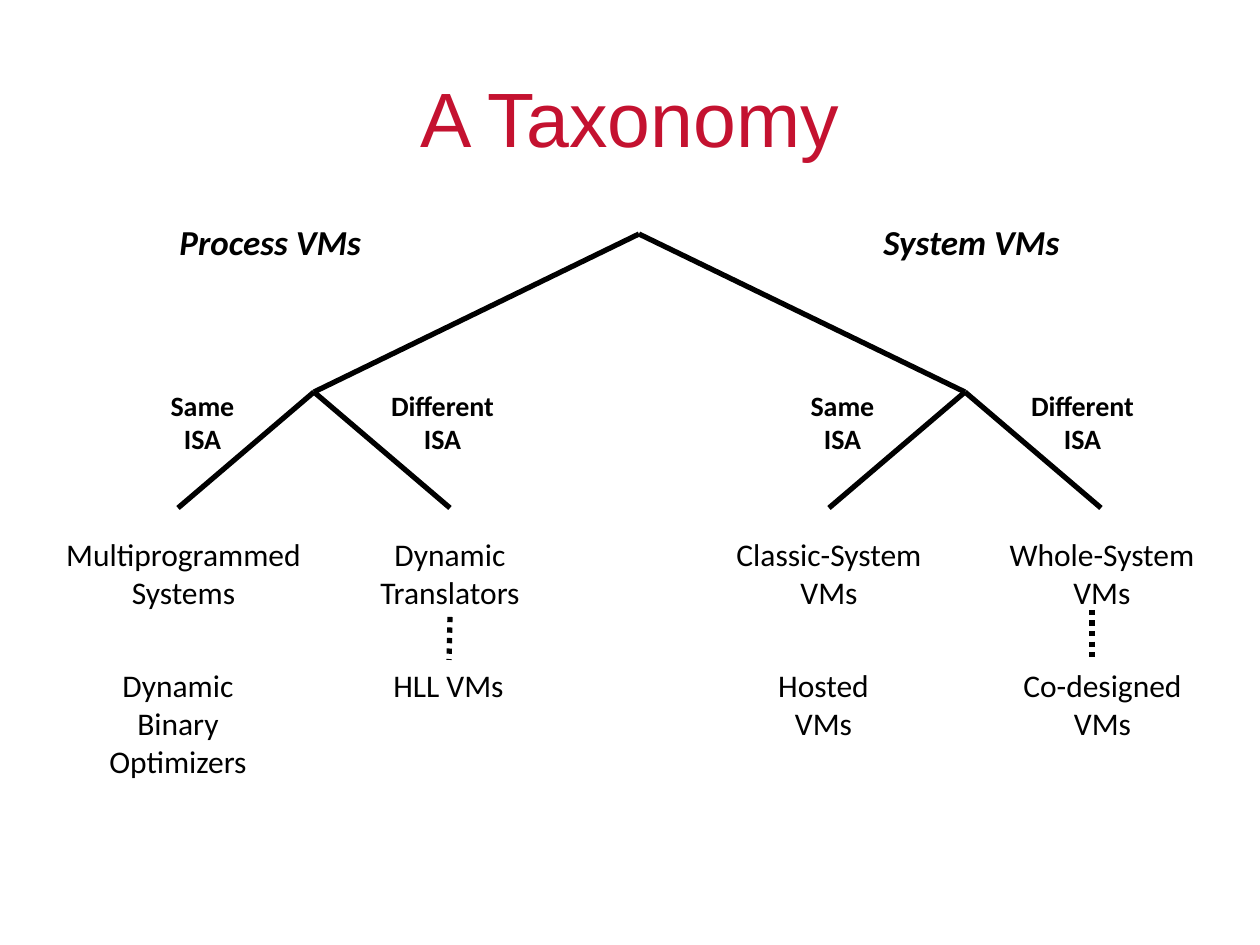
from typing import NamedTuple

from lxml.etree import SubElement
from pptx import Presentation
from pptx.dml.color import RGBColor
from pptx.enum.dml import MSO_LINE_DASH_STYLE as Dash
from pptx.enum.shapes import MSO_CONNECTOR as Conn
from pptx.enum.text import MSO_ANCHOR as Anchor, MSO_AUTO_SIZE as Fit, PP_ALIGN as Align
from pptx.oxml.ns import qn
from pptx.util import Emu, Pt

DPI = 126
RED = RGBColor(0xC4, 0x12, 0x30)
BLACK = RGBColor(0, 0, 0)
HEAD, EDGE, LEAF = 20, 16, 18


class Label(NamedTuple):
    text: str
    mid: int
    top: int
    width: int
    size: int = LEAF


class Line(NamedTuple):
    x1: int
    y1: int
    x2: int
    y2: int
    dots: bool = False


ROOT = (639, 234)
FORKS = (314, 965)
FORK_Y, END_Y = 392, 508
REACH = 136

LINES = [Line(*ROOT, x, FORK_Y) for x in FORKS]
LINES += [Line(x, FORK_Y, x + side * REACH, END_Y) for x in FORKS for side in (-1, 1)]
LINES += [Line(1092, 610, 1092, 660, True), Line(450, 617, 449, 660, True)]

LABELS = [
    Label("Process VMs", 271, 214, 209, HEAD),
    Label("System VMs", 972, 214, 203, HEAD),
]
for shift in (0, 640):
    LABELS += [
        Label("Same\nISA", 202 + shift, 382, 91, EDGE),
        Label("Different\nISA", 442 + shift, 382, 131, EDGE),
    ]
LABELS += [
    Label("Multiprogrammed\nSystems", 183, 529, 263),
    Label("Dynamic\nTranslators", 450, 529, 166),
    Label("Classic-System\nVMs", 829, 529, 212),
    Label("Whole-System\nVMs", 1102, 529, 212),
    Label("Dynamic\nBinary\nOptimizers", 178, 660, 164),
    Label("HLL VMs", 448, 660, 137),
    Label("Hosted\nVMs", 823, 660, 117),
    Label("Co-designed\nVMs", 1102, 660, 185),
]


def px(count: int) -> Emu:
    return Emu(round(count * 914400 / DPI))


def add_run(para, text: str, size: int, face: str, color: RGBColor):
    run = para.add_run()
    run.text = text
    font = run.font
    font.size, font.name = Pt(size), face
    font.color.rgb = color
    return font


def draw_title(slide) -> None:
    title = slide.shapes.title
    title.left, title.top, title.width, title.height = map(px, (63, 38, 1134, 157))
    frame = title.text_frame
    frame.vertical_anchor = Anchor.MIDDLE
    para = frame.paragraphs[0]
    para.alignment = Align.CENTER
    add_run(para, "A Taxonomy", 44, "Arial", RED)


def draw_line(slide, line: Line) -> None:
    ends = map(px, (line.x1, line.y1, line.x2, line.y2))
    conn = slide.shapes.add_connector(Conn.STRAIGHT, *ends)
    conn.line.color.rgb = BLACK
    conn.line.width = Pt(3)
    if line.dots:
        conn.line.dash_style = Dash.ROUND_DOT  # written as sysDot
    SubElement(conn._element.spPr, qn("a:effectLst"))


def draw_label(slide, label: Label) -> None:
    rows = label.text.split("\n")
    high = round(13 + len(rows) * label.size * 2.13)
    left = label.mid - label.width // 2
    box = slide.shapes.add_textbox(*map(px, (left, label.top, label.width, high)))
    frame = box.text_frame
    frame.word_wrap = False
    frame.auto_size = Fit.SHAPE_TO_FIT_TEXT
    for i, row in enumerate(rows):
        para = frame.add_paragraph() if i else frame.paragraphs[0]
        para.alignment = Align.LEFT if label.size == HEAD else Align.CENTER
        font = add_run(para, row, label.size, "Calibri", BLACK)
        font.bold = label.size != LEAF
        font.italic = label.size == HEAD


def main() -> None:
    deck = Presentation()
    deck.slide_width, deck.slide_height = px(1260), px(945)
    slide = deck.slides.add_slide(deck.slide_layouts[5])
    draw_title(slide)
    for line in LINES:
        draw_line(slide, line)
    for label in LABELS:
        draw_label(slide, label)
    deck.save("out.pptx")


if __name__ == "__main__":
    main()
